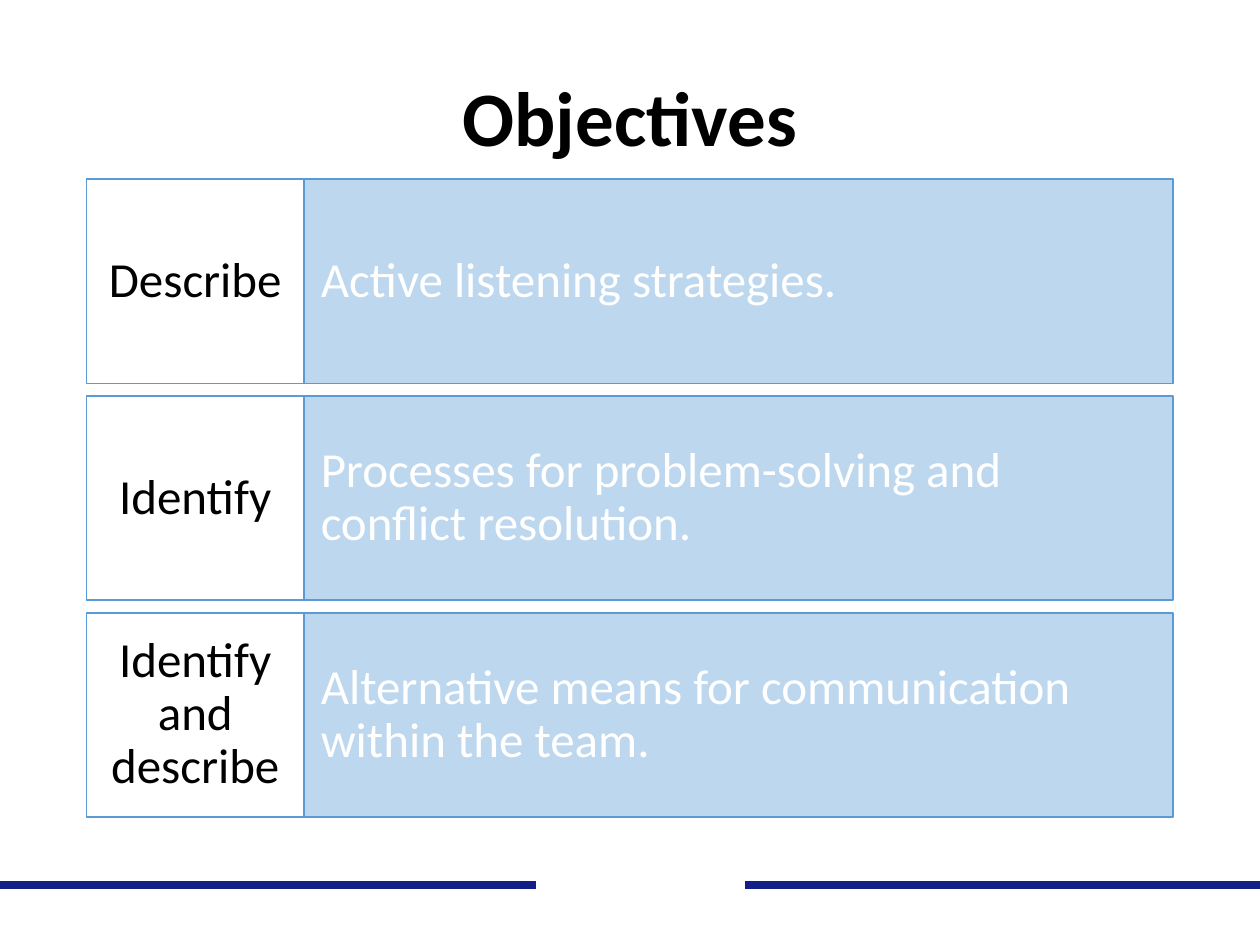
from dataclasses import dataclass

import pptx
import pptx.dml.color
import pptx.enum.shapes
import pptx.enum.text
import pptx.oxml.ns
import pptx.slide
import pptx.text.text
import pptx.util
from lxml import etree

Pt = pptx.util.Pt
RGBColor = pptx.dml.color.RGBColor
Alignment = pptx.enum.text.PP_ALIGN


@dataclass(frozen=True)
class Theme:
    font: str = "Calibri"
    title_size: float = 44
    body_size: float = 28
    dark: RGBColor = RGBColor(0, 0, 0)
    white: RGBColor = RGBColor(255, 255, 255)
    panel: RGBColor = RGBColor(0xBD, 0xD7, 0xEE)
    border: RGBColor = RGBColor(0x5B, 0x9B, 0xD5)
    footer: RGBColor = RGBColor(0x12, 0x1F, 0x88)


@dataclass(frozen=True)
class Objective:
    action: str
    detail: str


@dataclass(frozen=True)
class Column:
    left: float
    width: float
    side_inset: float
    end_inset: float
    fill: RGBColor
    color: RGBColor
    alignment: Alignment


@dataclass(frozen=True)
class FooterLine:
    start: float
    end: float
    color: RGBColor


THEME = Theme()
SLIDE_WIDTH, SLIDE_HEIGHT = 720, 540
CONTENT_LEFT, CONTENT_WIDTH = 49.5, 621
ACTION_WIDTH = CONTENT_WIDTH / 5
ROWS_TOP, ROW_HEIGHT, ROW_PITCH = 102.3, 116.9, 123.9
FOOTER_TOP = 505.5

ACTION_COLUMN = Column(CONTENT_LEFT, ACTION_WIDTH, 6.5, 11.5,
                       THEME.white, THEME.dark, Alignment.CENTER)
DETAIL_COLUMN = Column(CONTENT_LEFT + ACTION_WIDTH, CONTENT_WIDTH - ACTION_WIDTH, 9.6, 29.7,
                       THEME.panel, THEME.white, Alignment.LEFT)
OBJECTIVES = [
    Objective("Describe", "Active listening strategies."),
    Objective("Identify", "Processes for problem-solving and conflict resolution."),
    Objective("Identify and describe", "Alternative means for communication within the team."),
]
FOOTER_LINES = [
    FooterLine(0, SLIDE_WIDTH, THEME.footer),
    FooterLine(306, 425.5, THEME.white),
]


def format_paragraph(paragraph: pptx.text.text._Paragraph, size: float, color: RGBColor,
                     alignment: Alignment, bold: bool = False) -> None:
    paragraph.alignment = alignment
    paragraph.line_spacing = 0.9
    paragraph.font.name = THEME.font
    paragraph.font.size = Pt(size)
    paragraph.font.bold = bold
    paragraph.font.color.rgb = color


def add_footer_line(slide: pptx.slide.Slide, line: FooterLine) -> None:
    connector = slide.shapes.add_connector(
        pptx.enum.shapes.MSO_CONNECTOR.STRAIGHT,
        Pt(line.start), Pt(FOOTER_TOP), Pt(line.end), Pt(FOOTER_TOP))
    connector.line.color.rgb = line.color
    connector.line.width = Pt(4.5)
    etree.SubElement(connector._element.spPr, pptx.oxml.ns.qn("a:effectLst"))


def set_title(slide: pptx.slide.Slide, text: str) -> None:
    title = slide.shapes.title
    title.left, title.top = Pt(CONTENT_LEFT), Pt(17.25)
    title.width, title.height = Pt(CONTENT_WIDTH), Pt(104.4)
    frame = title.text_frame
    frame.text = text
    frame.auto_size = pptx.enum.text.MSO_AUTO_SIZE.NONE
    frame.vertical_anchor = pptx.enum.text.MSO_ANCHOR.MIDDLE
    format_paragraph(frame.paragraphs[0], THEME.title_size, THEME.dark,
                     Alignment.CENTER, bold=True)


def add_cell(slide: pptx.slide.Slide, column: Column, top: float, text: str) -> None:
    shape = slide.shapes.add_shape(
        pptx.enum.shapes.MSO_SHAPE.RECTANGLE,
        Pt(column.left), Pt(top), Pt(column.width), Pt(ROW_HEIGHT))
    shape.shadow.inherit = False
    shape.fill.solid()
    shape.fill.fore_color.rgb = column.fill
    shape.line.color.rgb = THEME.border
    shape.line.width = Pt(1)
    frame = shape.text_frame
    frame.word_wrap = True
    frame.vertical_anchor = pptx.enum.text.MSO_ANCHOR.MIDDLE
    frame.margin_left = frame.margin_right = Pt(column.side_inset)
    frame.margin_top = frame.margin_bottom = Pt(column.end_inset)
    frame.text = text
    format_paragraph(frame.paragraphs[0], THEME.body_size, column.color, column.alignment)


def main() -> None:
    presentation = pptx.Presentation()
    presentation.slide_width = Pt(SLIDE_WIDTH)
    presentation.slide_height = Pt(SLIDE_HEIGHT)
    slide = presentation.slides.add_slide(presentation.slide_layouts.get_by_name("Title Only"))
    for line in FOOTER_LINES:
        add_footer_line(slide, line)
    set_title(slide, "Objectives")
    for index, objective in enumerate(OBJECTIVES):
        top = ROWS_TOP + index * ROW_PITCH
        add_cell(slide, DETAIL_COLUMN, top, objective.detail)
        add_cell(slide, ACTION_COLUMN, top, objective.action)
    presentation.save("out.pptx")


if __name__ == "__main__":
    main()
